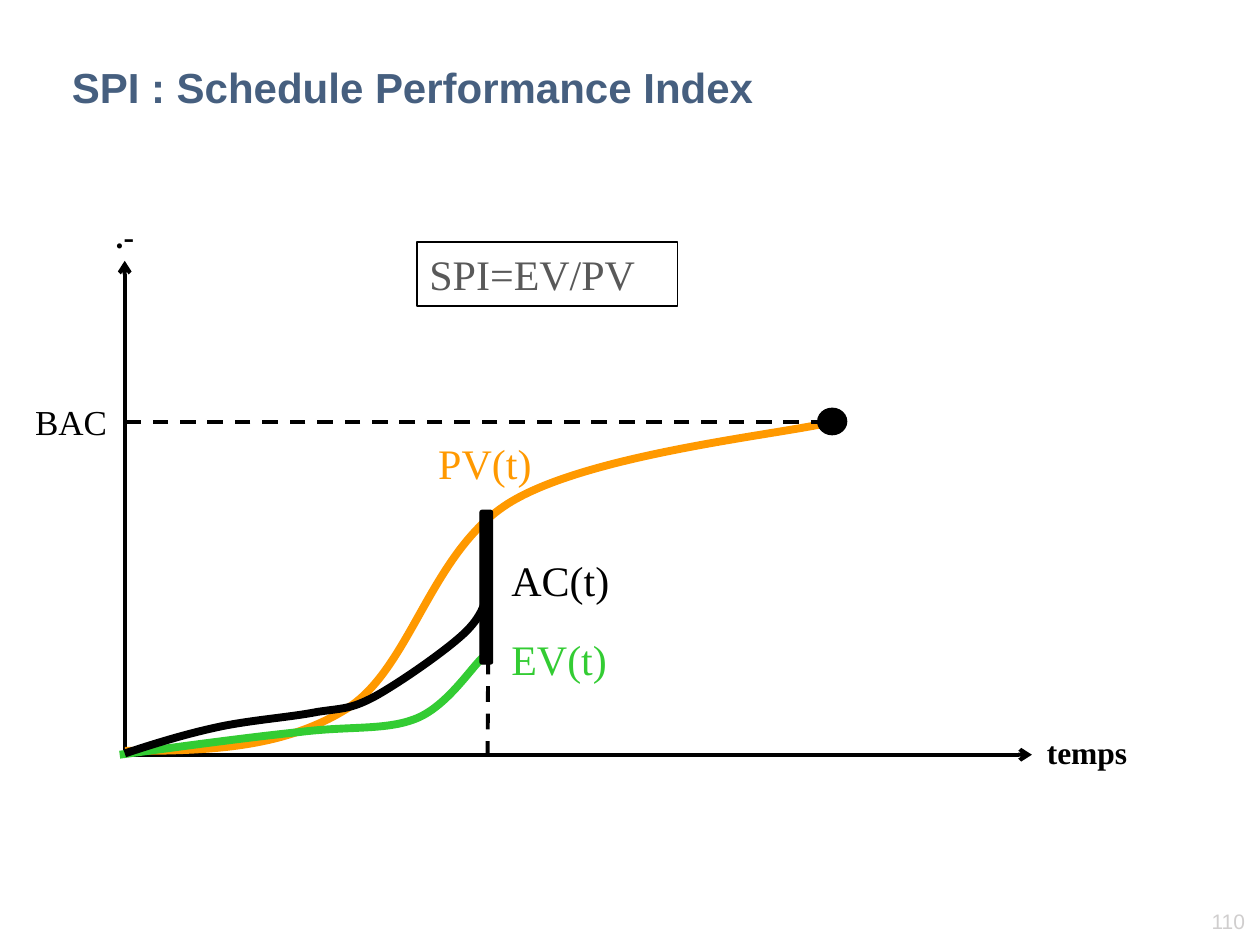
from pptx import Presentation
from pptx.dml.color import RGBColor
from pptx.enum.dml import MSO_LINE as Dash
from pptx.enum.shapes import MSO_CONNECTOR as Connector, MSO_SHAPE as Shape
from pptx.enum.text import MSO_ANCHOR as Anchor, MSO_AUTO_SIZE as AutoSize, PP_ALIGN as Align
from pptx.oxml.ns import qn
from pptx.util import Inches, Pt
from lxml.etree import SubElement

BLACK = RGBColor(0x00, 0x00, 0x00)
SLATE = RGBColor(0x46, 0x5F, 0x7F)
GREY = RGBColor(0x59, 0x59, 0x59)
PALE = RGBColor(0xD0, 0xCE, 0xCE)
ORANGE = RGBColor(0xFF, 0x99, 0x00)
GREEN = RGBColor(0x33, 0xCC, 0x33)
SERIF, SANS = "Times New Roman", "Arial"

# Content, in inches
WIDTH, HEIGHT = 10, 7.5
TITLE = "SPI : Schedule Performance Index"
FORMULA = "SPI=EV/PV"
AXIS_X, AXIS_Y, BAC_Y, NOW_X = 0.99, 5.99, 3.35, 3.88

# text, (left, top, width, height), size, colour, bold
LABELS = [
    (".-", (0.82, 1.67, 0.35, 0.4), 18, BLACK, True),
    ("temps", (8.21, 5.77, 0.84, 0.4), 18, BLACK, True),
    ("AC(t)", (3.96, 4.35, 0.98, 0.5), 24, BLACK, False),
    ("EV(t)", (3.96, 4.98, 0.96, 0.5), 24, GREEN, False),
    ("BAC", (0.18, 3.13, 0.77, 0.43), 20, BLACK, False),
    ("PV(t)", (3.38, 3.42, 0.94, 0.5), 24, ORANGE, False),
]

# Start point, then three Bezier points for each segment
PLANNED = [
    (0.99, 5.96),
    (1.61, 5.96), (2.24, 5.95), (2.76, 5.62),
    (3.27, 5.29), (3.42, 4.36), (4.06, 3.98),
    (4.7, 3.6), (6.18, 3.45), (6.6, 3.35),
]
EARNED = [
    (0.95, 5.99),
    (1.47, 5.92), (1.99, 5.85), (2.38, 5.81),
    (2.78, 5.76), (3.07, 5.8), (3.31, 5.7),
    (3.55, 5.6), (3.74, 5.3), (3.83, 5.22),
]
ACTUAL = [
    (0.99, 5.98),
    (1.26, 5.89), (1.53, 5.81), (1.78, 5.76),
    (2.04, 5.71), (2.32, 5.69), (2.52, 5.65),
    (2.72, 5.62), (2.78, 5.63), (2.97, 5.53),
    (3.17, 5.42), (3.53, 5.17), (3.68, 5.03),
    (3.83, 4.89), (3.85, 4.78), (3.88, 4.67),
]

deck = Presentation()
deck.slide_width, deck.slide_height = Inches(WIDTH), Inches(HEIGHT)
page = deck.slides.add_slide(deck.slide_layouts.get_by_name("Title Only"))


def emu(values):
    return [Inches(value) for value in values]


def write(shape, text, font, size, colour, bold=False, align=Align.LEFT):
    para = shape.text_frame.paragraphs[0]
    para.alignment = align
    span = para.add_run()
    span.text = text
    span.font.name, span.font.size, span.font.bold = font, Pt(size), bold
    span.font.color.rgb = colour


def add_label(text, place, size, colour, bold=False, font=SERIF, wrap=False, align=Align.LEFT):
    box = page.shapes.add_textbox(*emu(place))
    box.text_frame.word_wrap = wrap
    box.text_frame.auto_size = AutoSize.SHAPE_TO_FIT_TEXT
    write(box, text, font, size, colour, bold, align)


def add_line(start, end, dashed=False):
    line = page.shapes.add_connector(Connector.STRAIGHT, *emu(start + end))
    line.line.color.rgb, line.line.width = BLACK, Pt(2.25)
    if dashed:
        line.line.dash_style = Dash.DASH
    else:
        SubElement(line.line._get_or_add_ln(), qn("a:tailEnd"), type="arrow")
    SubElement(line._element.spPr, qn("a:effectLst"))


def add_box(kind, place, fill=None):
    box = page.shapes.add_shape(kind, *emu(place))
    box.shadow.inherit = False
    if fill is None:
        box.fill.background()
    else:
        box.fill.solid()
        box.fill.fore_color.rgb = fill
    box.line.color.rgb, box.line.width = BLACK, Pt(0.75)
    return box


def add_curve(points, colour):
    start, *rest = [emu(point) for point in points]
    builder = page.shapes.build_freeform(*start)
    builder.add_line_segments(rest, close=False)
    curve = builder.convert_to_shape()
    # Every three straight segments become one Bezier segment
    steps = list(curve._element.iter(qn("a:lnTo")))
    for first, second, third in zip(steps[::3], steps[1::3], steps[2::3]):
        bezier = SubElement(first.getparent(), qn("a:cubicBezTo"))
        for step in (first, second, third):
            bezier.append(step[0])
            step.getparent().remove(step)
    curve.shadow.inherit = False
    curve.fill.background()
    curve.line.color.rgb, curve.line.width = colour, Pt(4.5)


# Title and page number
title = page.shapes.title
title.left, title.top, title.width, title.height = emu((0.47, 0.41, 8.47, 0.56))
title.text_frame.auto_size = AutoSize.NONE
title.text_frame.vertical_anchor = Anchor.MIDDLE
write(title, TITLE, SANS, 24, SLATE, bold=True)
add_label("110", (9.16, 7.16, 0.82, 0.3), 12, PALE, font=SANS, wrap=True, align=Align.RIGHT)

# Axes
add_line((AXIS_X, AXIS_Y), (AXIS_X, 2.07))
add_line((AXIS_X, AXIS_Y), (8.19, AXIS_Y))

# Curves and end point
add_curve(PLANNED, ORANGE)
add_box(Shape.OVAL, (6.49, 3.24, 0.23, 0.21), BLACK)
add_curve(EARNED, GREEN)
add_curve(ACTUAL, BLACK)

# Guides and the gap between planned and earned value
add_line((NOW_X, 4.14), (NOW_X - 0.01, 6.05), dashed=True)
gap = add_box(Shape.ROUNDED_RECTANGLE, (3.81, 4.05, 0.1, 1.22), BLACK)
gap.adjustments[0] = 0.17
add_line((6.56, BAC_Y), (0.97, BAC_Y), dashed=True)

# Formula and labels
formula = add_box(Shape.RECTANGLE, (3.31, 1.92, 2.07, 0.51))
formula.text_frame.word_wrap = True
formula.text_frame.auto_size = AutoSize.SHAPE_TO_FIT_TEXT
formula.text_frame.vertical_anchor = Anchor.TOP
write(formula, FORMULA, SERIF, 24, GREY)
for label in LABELS:
    add_label(*label)

deck.save("out.pptx")
